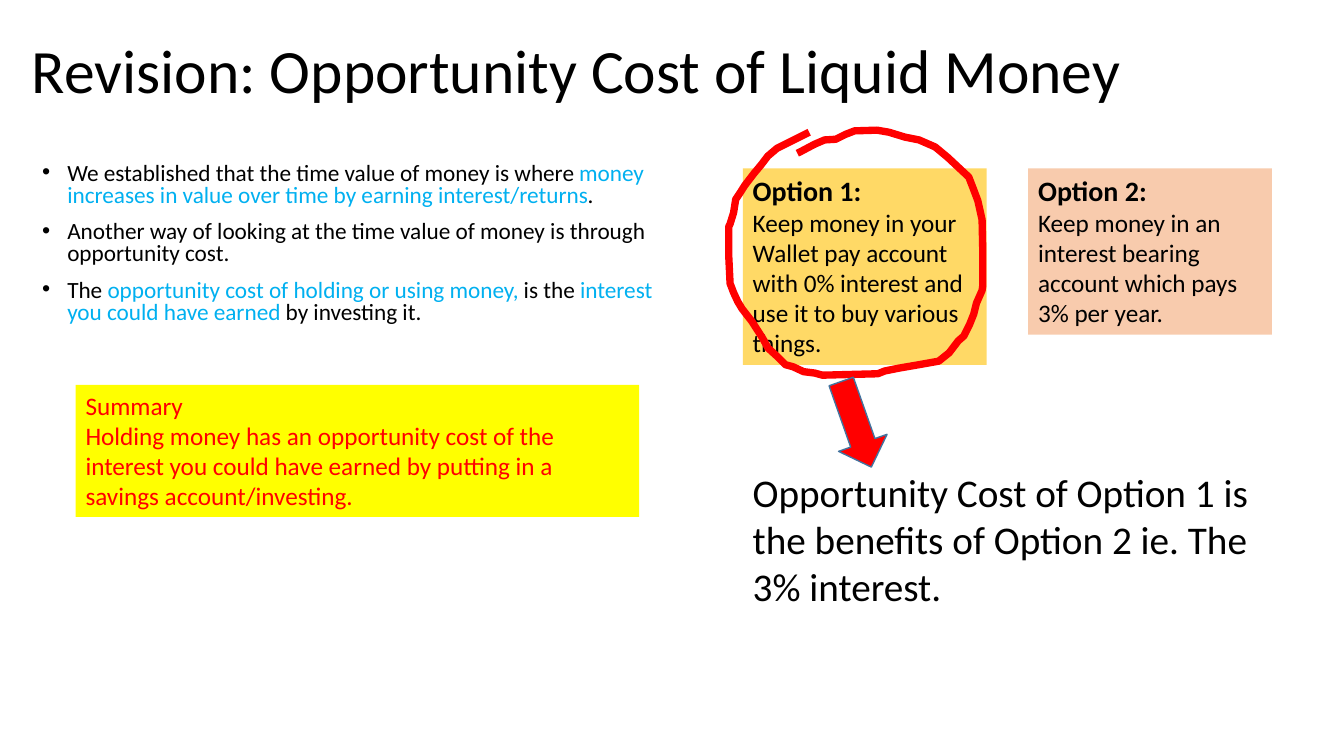
from pptx import Presentation
from pptx.dml.color import RGBColor
from pptx.enum.shapes import MSO_SHAPE
from pptx.enum.text import MSO_ANCHOR, MSO_AUTO_SIZE
from pptx.oxml.ns import qn
from pptx.util import Pt

DOWN_ARROW = MSO_SHAPE.DOWN_ARROW
TOP, MIDDLE = MSO_ANCHOR.TOP, MSO_ANCHOR.MIDDLE
GROW, FIXED = MSO_AUTO_SIZE.SHAPE_TO_FIT_TEXT, MSO_AUTO_SIZE.NONE

COLORS = {
    "black": "000000",
    "blue": "00B0F0",
    "red": "FF0000",
    "yellow": "FFFF00",
    "gold": "FFD966",
    "peach": "F8CBAD",
    "arrow edge": "43739E",
}

# Hand-drawn loop around option 1, in points
LOOP = [
    (578, 94.5), (568, 99.5), (555, 106), (548.5, 111.5), (543.5, 118),
    (538.5, 124), (532, 132.5), (528.5, 138), (525.5, 142.5), (524, 152),
    (521.5, 160), (520.5, 162), (520.5, 182), (521.5, 202.5), (524, 209),
    (527, 215.5), (530, 220.5), (537, 229.5), (545, 242), (548.5, 248.5),
    (554.5, 254), (561, 260.5), (566.5, 262), (574, 265.5), (582, 266.5),
    (587.5, 268), (627, 267), (632, 265), (642, 263), (656.5, 260.5),
    (670.5, 258), (678, 252), (684.5, 243.5), (688.5, 240), (692.5, 232),
    (695.5, 224.5), (697.5, 216.5), (701.5, 207.5), (702, 204), (702, 180),
    (701.5, 157), (698.5, 143.5), (695.5, 135.5), (692, 126.5),
    (684.5, 119.5), (677, 112.5), (668, 105), (656.5, 100), (646.5, 98),
    (635, 94.5), (626.5, 93), (610.5, 93.5), (604, 96), (597, 99.5),
    (589, 100), (582, 103), (572.5, 108), (569.5, 109.5),
]

BULLETS = [
    [("We established that the time value of money is where ", "black"),
     ("money increases in value over time by earning interest/returns", "blue"),
     (".", "black")],
    [("Another way of looking at the time value of money is through opportunity cost.", "black")],
    [("The ", "black"),
     ("opportunity cost of holding or using money,", "blue"),
     (" is the ", "black"),
     ("interest you could have earned", "blue"),
     (" by investing it.", "black")],
]

OPTIONS = [
    (530.6, 140.4, "gold", "Option 1:",
     "Keep money in your Wallet pay account with 0% interest and use it to buy various things."),
    (734.4, 118.8, "peach", "Option 2:",
     "Keep money in an interest bearing account which pays 3% per year."),
]


class SlideBuilder:
    font = "Calibri"

    def __init__(self, slide):
        self.shapes = slide.shapes

    def color(self, name):
        return RGBColor.from_string(COLORS[name])

    def box(self, left, top, width, height, fill=None, anchor=TOP, fit=GROW):
        box = self.shapes.add_textbox(Pt(left), Pt(top), Pt(width), Pt(height))
        if fill:
            box.fill.solid()
            box.fill.fore_color.rgb = self.color(fill)
        frame = box.text_frame
        frame.word_wrap = True
        frame.auto_size = fit
        frame.vertical_anchor = anchor
        return frame

    def paragraph(self, frame, spans, size, bold=False):
        """Fill the first empty paragraph, or add one, with (text, color) spans."""
        first = frame.paragraphs[0]
        para = frame.add_paragraph() if first.runs else first
        for text, color in spans:
            span = para.add_run()
            span.text = text
            span.font.name = self.font
            span.font.size = Pt(size)
            span.font.bold = bold
            span.font.color.rgb = self.color(color)
        return para

    def bullet(self, frame, spans, size):
        para = self.paragraph(frame, spans, size)
        para.line_spacing = 0.8
        para.space_before = Pt(10)
        properties = para._p.get_or_add_pPr()
        properties.set("marL", str(Pt(18)))
        properties.set("indent", str(-Pt(18)))
        typeface = properties.makeelement(qn("a:buFont"), {"typeface": "Arial"})
        mark = properties.makeelement(qn("a:buChar"), {"char": "•"})
        properties.extend([typeface, mark])

    def stroke(self, points, color, width):
        """Draw an open, unfilled line through the points."""
        start, *rest = [(Pt(x), Pt(y)) for x, y in points]
        builder = self.shapes.build_freeform(*start)
        builder.add_line_segments(rest, close=False)
        line = builder.convert_to_shape()
        line.shadow.inherit = False
        line.fill.background()
        line.line.color.rgb = self.color(color)
        line.line.width = Pt(width)

    def arrow(self, left, top, width, height, rotation, fill, edge):
        arrow = self.shapes.add_shape(DOWN_ARROW, Pt(left), Pt(top), Pt(width), Pt(height))
        arrow.rotation = rotation
        arrow.shadow.inherit = False
        arrow.fill.solid()
        arrow.fill.fore_color.rgb = self.color(fill)
        arrow.line.color.rgb = self.color(edge)
        arrow.line.width = Pt(1)


def main():
    deck = Presentation()
    deck.slide_width, deck.slide_height = Pt(960), Pt(540)
    page = SlideBuilder(deck.slides.add_slide(deck.slide_layouts[6]))

    title = page.box(15.8, 0, 828, 104.4, anchor=MIDDLE, fit=FIXED)
    heading = page.paragraph(title, [("Revision: Opportunity Cost of Liquid Money", "black")], 44)
    heading.line_spacing = 0.9

    body = page.box(23, 113, 463, 133.2, fit=FIXED)
    for spans in BULLETS:
        page.bullet(body, spans, 16.6)

    for left, height, fill, name, description in OPTIONS:
        option = page.box(left, 120.2, 174.2, height, fill)
        page.paragraph(option, [(name, "black")], 20, bold=True)
        page.paragraph(option, [(description, "black")], 18)

    conclusion = page.box(530.6, 331.2, 368.6, 108.7)
    page.paragraph(conclusion, [
        ("Opportunity Cost of Option 1 is the benefits of Option 2 ie. The 3% interest.", "black"),
    ], 28)

    page.stroke(LOOP, "red", 5.25)
    page.arrow(593.3, 270.7, 36.7, 64.8, 340.6, "red", "arrow edge")

    summary = page.box(54, 275, 402.5, 94.3, "yellow")
    for text in (
        "Summary",
        "Holding money has an opportunity cost of the interest you could have earned "
        "by putting in a savings account/investing.",
    ):
        page.paragraph(summary, [(text, "red")], 18)

    deck.save("out.pptx")


if __name__ == "__main__":
    main()
